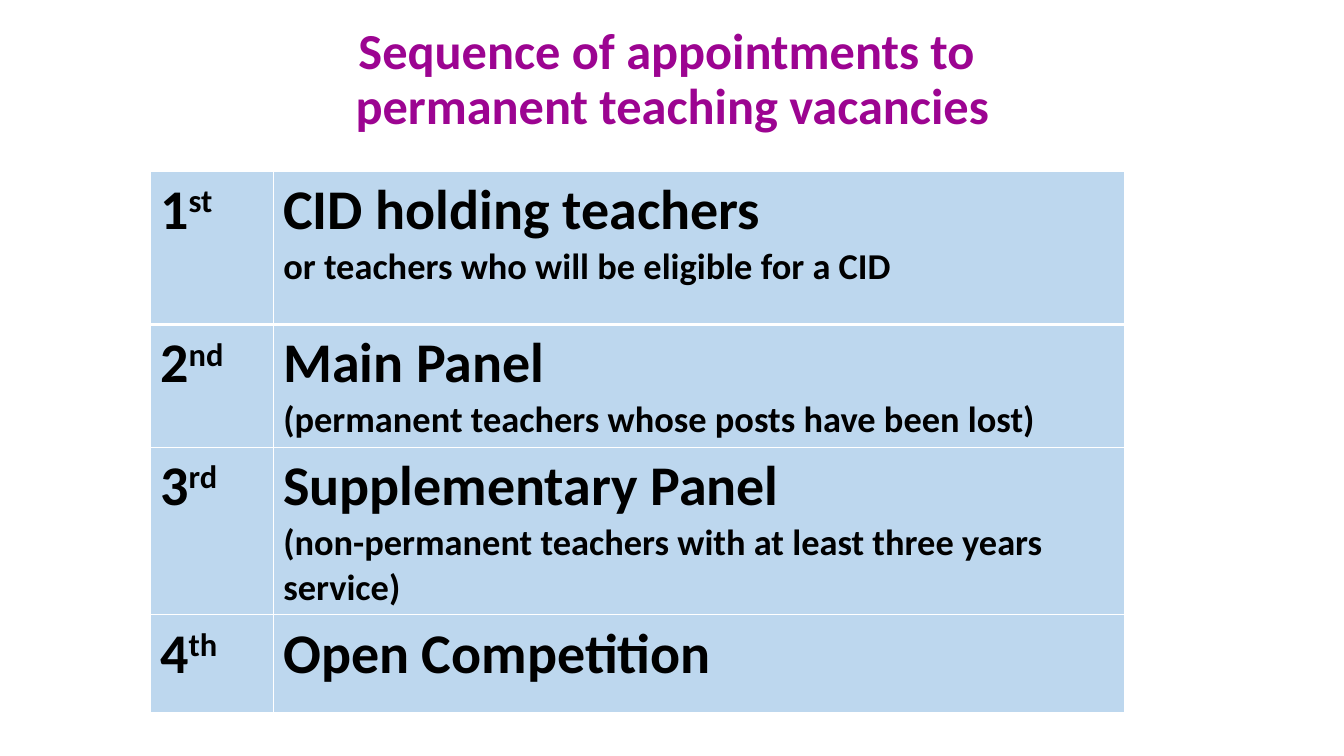
from lxml import etree
from pptx import Presentation
from pptx.dml.color import RGBColor
from pptx.enum import text
from pptx.oxml import ns
from pptx.util import Inches, Pt

HUES = {"title": "9C0491", "ink": "000000", "cell": "BDD7EE", "line": "FFFFFF"}
FONT = "Calibri"
TITLE = ["Sequence of appointments to ", "permanent teaching vacancies"]
STEPS = [
    ("1", "st", "CID holding teachers", "or teachers who will be eligible for a CID"),
    ("2", "nd", "Main Panel", "(permanent teachers whose posts have been lost)"),
    ("3", "rd", "Supplementary Panel",
     "(non-permanent teachers with at least three years service)"),
    ("4", "th", "Open Competition", None),
]
COLS = [1.22, 8.44]
ROWS = [1.52, 1.22, 1.66, 0.97]


def add_run(para, words, size, hue="ink"):
    run = para.add_run()
    run.text = words
    font = run.font
    font.name, font.size, font.bold = FONT, Pt(size), True
    font.color.rgb = RGBColor.from_string(HUES[hue])
    return run


def add_edge(cell, side, width):
    line = etree.SubElement(cell._tc.get_or_add_tcPr(), ns.qn(f"a:ln{side}"),
                            w=str(Pt(width)))
    fill = etree.SubElement(line, ns.qn("a:solidFill"))
    etree.SubElement(fill, ns.qn("a:srgbClr"), val=HUES["line"])


def style_cell(cell, row):
    """Draw white edges, thicker under the first row, and fill the cell."""
    widths = {"L": 1, "R": 1, "T": 3 if row == 1 else 1, "B": 3 if row == 0 else 1}
    for side, width in widths.items():
        add_edge(cell, side, width)
    cell.fill.solid()
    cell.fill.fore_color.rgb = RGBColor.from_string(HUES["cell"])


def add_title(slide, left, top, width, height):
    title = slide.shapes.title
    title.left, title.top = Inches(left), Inches(top)
    title.width, title.height = Inches(width), Inches(height)
    frame = title.text_frame
    frame.word_wrap = True
    frame.auto_size = text.MSO_AUTO_SIZE.NONE
    frame.vertical_anchor = text.MSO_ANCHOR.MIDDLE
    frame.margin_bottom = Inches(0.7)
    para = frame.paragraphs[0]
    para.alignment = text.PP_ALIGN.CENTER
    para.line_spacing = 0.9
    for i, words in enumerate(TITLE):
        if i:
            para.add_line_break()
        add_run(para, words, 36, "title")


def add_steps(slide, left, top):
    frame = slide.shapes.add_table(len(ROWS), len(COLS), Inches(left), Inches(top),
                                   Inches(sum(COLS)), Inches(sum(ROWS)))
    table = frame.table
    table.first_row = table.horz_banding = False
    for col, width in zip(table.columns, COLS):
        col.width = Inches(width)
    for i, (number, suffix, name, note) in enumerate(STEPS):
        table.rows[i].height = Inches(ROWS[i])
        rank, group = table.cell(i, 0), table.cell(i, 1)
        style_cell(rank, i)
        style_cell(group, i)
        para = rank.text_frame.paragraphs[0]
        add_run(para, number, 40)
        raised = add_run(para, suffix, 40)
        raised.font._element.set("baseline", "30000")
        add_run(group.text_frame.paragraphs[0], name, 40)
        if note:
            add_run(group.text_frame.add_paragraph(), note, 26)


def main():
    deck = Presentation()
    deck.slide_width, deck.slide_height = Inches(13.33), Inches(7.5)
    slide = deck.slides.add_slide(deck.slide_layouts[5])
    add_title(slide, 0.92, 0.4, 11.5, 1.45)
    add_steps(slide, 1.49, 1.7)
    deck.save("out.pptx")


if __name__ == "__main__":
    main()
